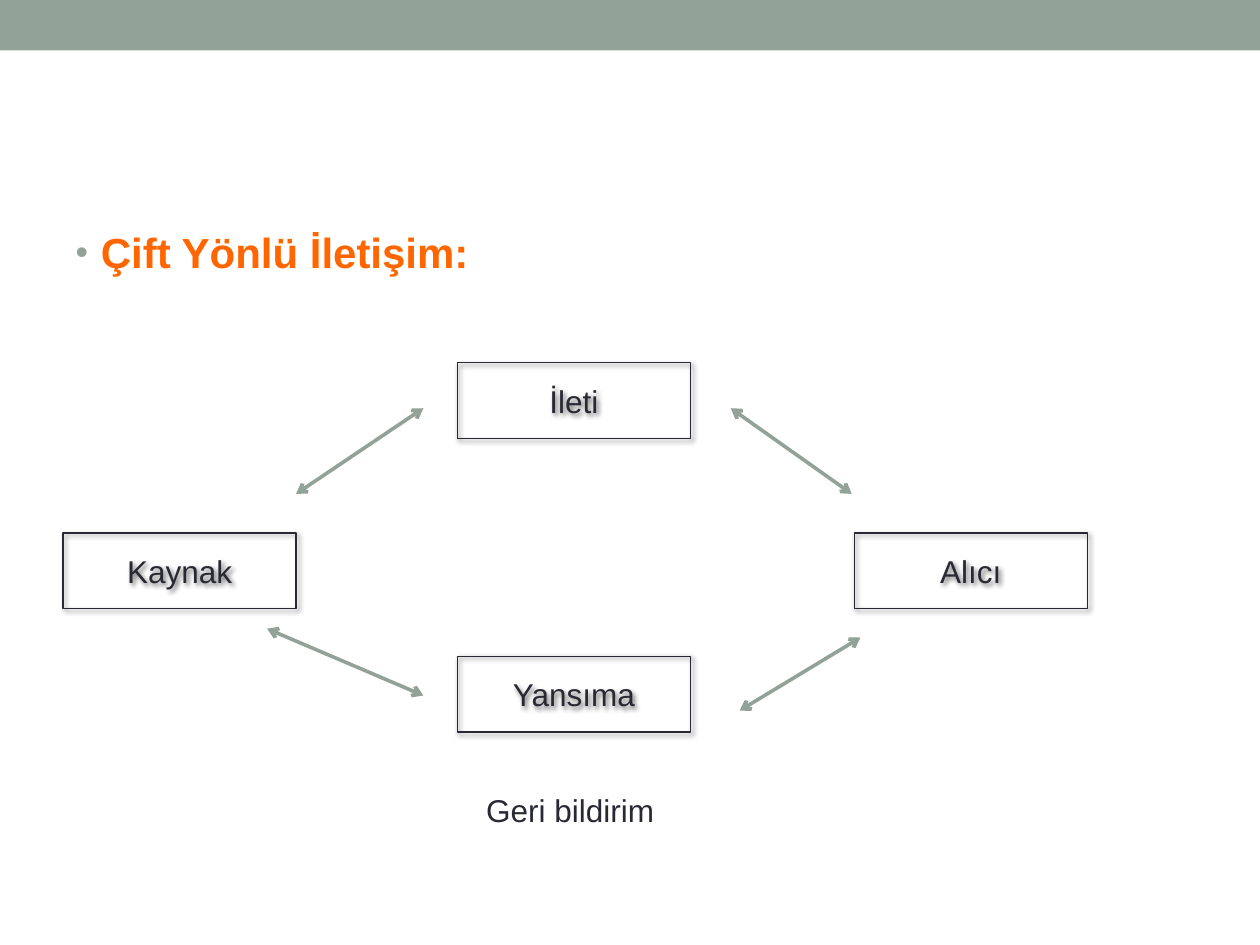
from lxml.etree import SubElement
from pptx import Presentation
from pptx.dml.color import RGBColor
from pptx.enum.shapes import MSO_CONNECTOR as CONNECTOR, MSO_SHAPE as SHAPE
from pptx.enum.text import MSO_ANCHOR as ANCHOR, MSO_AUTO_SIZE as AUTO_SIZE, PP_ALIGN as ALIGN
from pptx.oxml.ns import qn
from pptx.util import Inches, Pt

COLORS = {"sage": "93A299", "ink": "292934", "orange": "FF6600", "shadow": "000000"}
NODE_SIZE = (1.85, 0.6)
NODES = [("Kaynak", 0.5, 4.23), ("İleti", 3.63, 2.88),
         ("Yansıma", 3.63, 5.21), ("Alıcı", 6.78, 4.23)]
ARROWS = [(2.35, 3.92, 3.36, 3.24), (5.8, 3.24, 6.76, 3.92),
          (2.12, 4.99, 3.36, 5.52), (5.87, 5.64, 6.83, 5.06)]


def color(name):
    return RGBColor.from_string(COLORS[name])


def add(parent, tag, **attributes):
    return SubElement(parent, qn(tag), attributes)


def style(paragraph, size, name, bold=False):
    font = paragraph.font
    font.name, font.size, font.bold = "Arial", Pt(size), bold
    font.color.rgb = color(name)


def add_band(slide, box):
    band = slide.shapes.add_shape(SHAPE.RECTANGLE, *map(Inches, box))
    band.shadow.inherit = False
    band.fill.solid()
    band.fill.fore_color.rgb = color("sage")
    band.line.fill.background()


def fill_body(slide, box):
    body = slide.placeholders[1]
    body.left, body.top, body.width, body.height = map(Inches, box)
    heading = body.text_frame.paragraphs[0]
    heading.text = "Çift Yönlü İletişim:"
    heading.space_before = Pt(0)
    props = heading._p.get_or_add_pPr()
    props.set("marL", str(Inches(0.2)))
    props.set("indent", str(Inches(-0.2)))
    add(add(props, "a:buClr"), "a:srgbClr", val=COLORS["sage"])
    add(props, "a:buSzPct", val="85000")
    add(props, "a:buFont", typeface="Arial")
    add(props, "a:buChar", char="•")
    style(heading, 24, "orange", bold=True)


def add_node(slide, label, box):
    node = slide.shapes.add_shape(SHAPE.RECTANGLE, *map(Inches, box))
    node.fill.background()
    node.line.color.rgb = color("ink")
    node.line.width = Pt(0.75)
    node.shadow.inherit = False
    effects = node._element.spPr.find(qn("a:effectLst"))
    shadow = add(effects, "a:outerShdw", blurRad=str(Pt(3)), dist=str(Pt(2)),
                 dir=str(45 * 60000), algn="tl", rotWithShape="0")
    tint = add(shadow, "a:srgbClr", val=COLORS["shadow"])
    add(tint, "a:alpha", val="60000")
    node.text_frame.vertical_anchor = ANCHOR.MIDDLE
    caption = node.text_frame.paragraphs[0]
    caption.text = label
    caption.alignment = ALIGN.CENTER
    style(caption, 18, "ink")


def add_arrow(slide, ends):
    arrow = slide.shapes.add_connector(CONNECTOR.STRAIGHT, *map(Inches, ends))
    arrow.line.color.rgb = color("sage")
    arrow.line.width = Pt(2.08)
    line = arrow.line._get_or_add_ln()
    add(line, "a:headEnd", type="arrow")
    add(line, "a:tailEnd", type="arrow")
    add(arrow._element.spPr, "a:effectLst")


def add_diagram(slide, left, top):
    for label, x, y in NODES:
        add_node(slide, label, (left + x, top + y, *NODE_SIZE))
    for x1, y1, x2, y2 in ARROWS:
        add_arrow(slide, (left + x1, top + y1, left + x2, top + y2))


def add_feedback(slide, box):
    feedback = slide.shapes.add_textbox(*map(Inches, box)).text_frame
    feedback.word_wrap = True
    feedback.auto_size = AUTO_SIZE.SHAPE_TO_FIT_TEXT
    feedback.text = "Geri bildirim"
    style(feedback.paragraphs[0], 18, "ink")


def main():
    deck = Presentation()
    deck.slide_width, deck.slide_height = Inches(10), Inches(7.5)
    slide = deck.slides.add_slide(deck.slide_layouts[1])
    title = slide.shapes.title._element
    title.getparent().remove(title)
    add_band(slide, (0, 0, 10, 0.4))
    fill_body(slide, (0.5, 1.75, 9, 5.33))
    add_diagram(slide, 0, 0)
    add_feedback(slide, (3.76, 6.23, 2.18, 0.4))
    deck.save("out.pptx")


if __name__ == "__main__":
    main()
